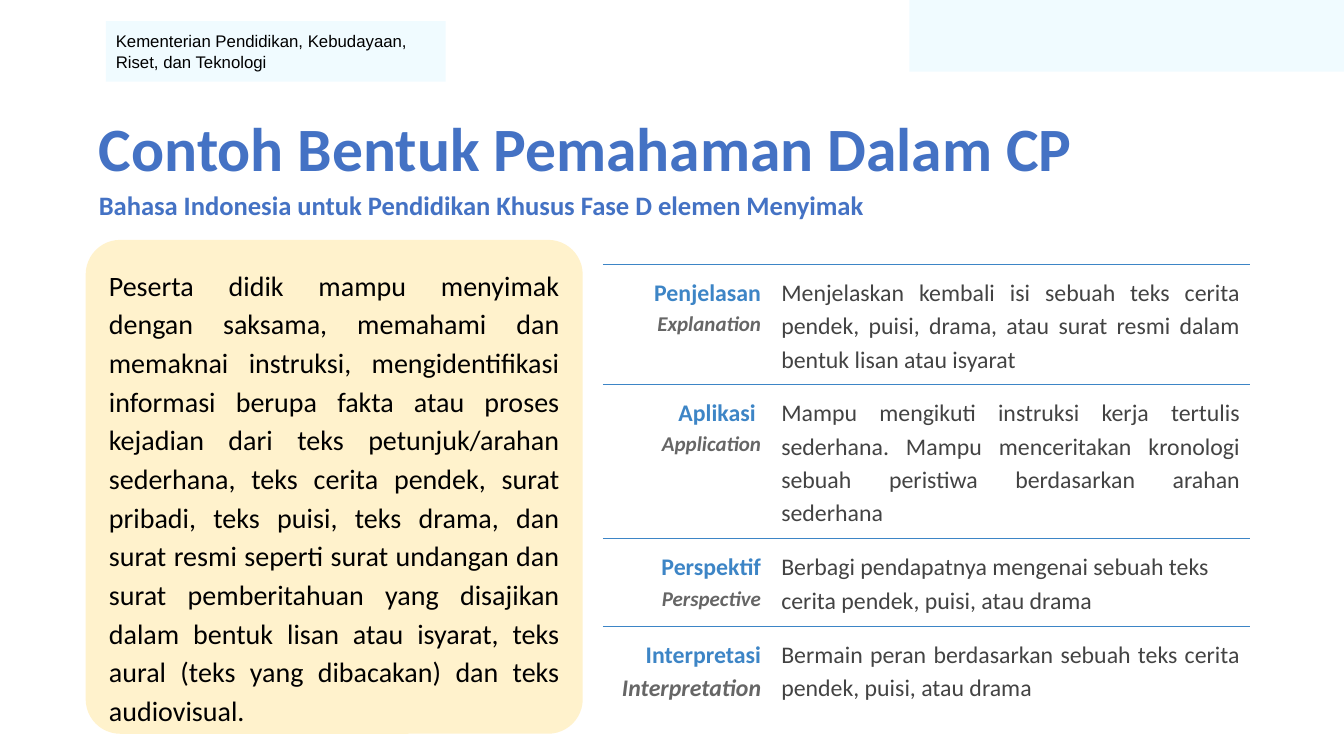
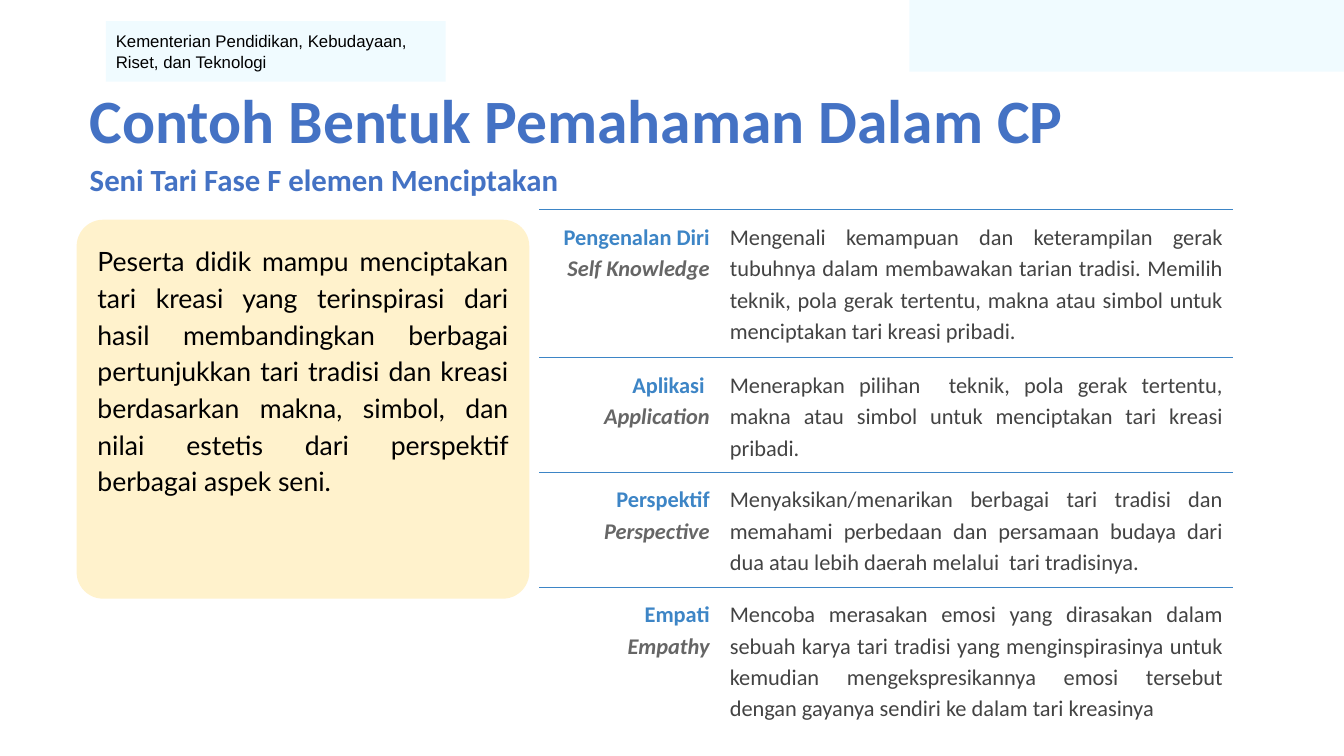
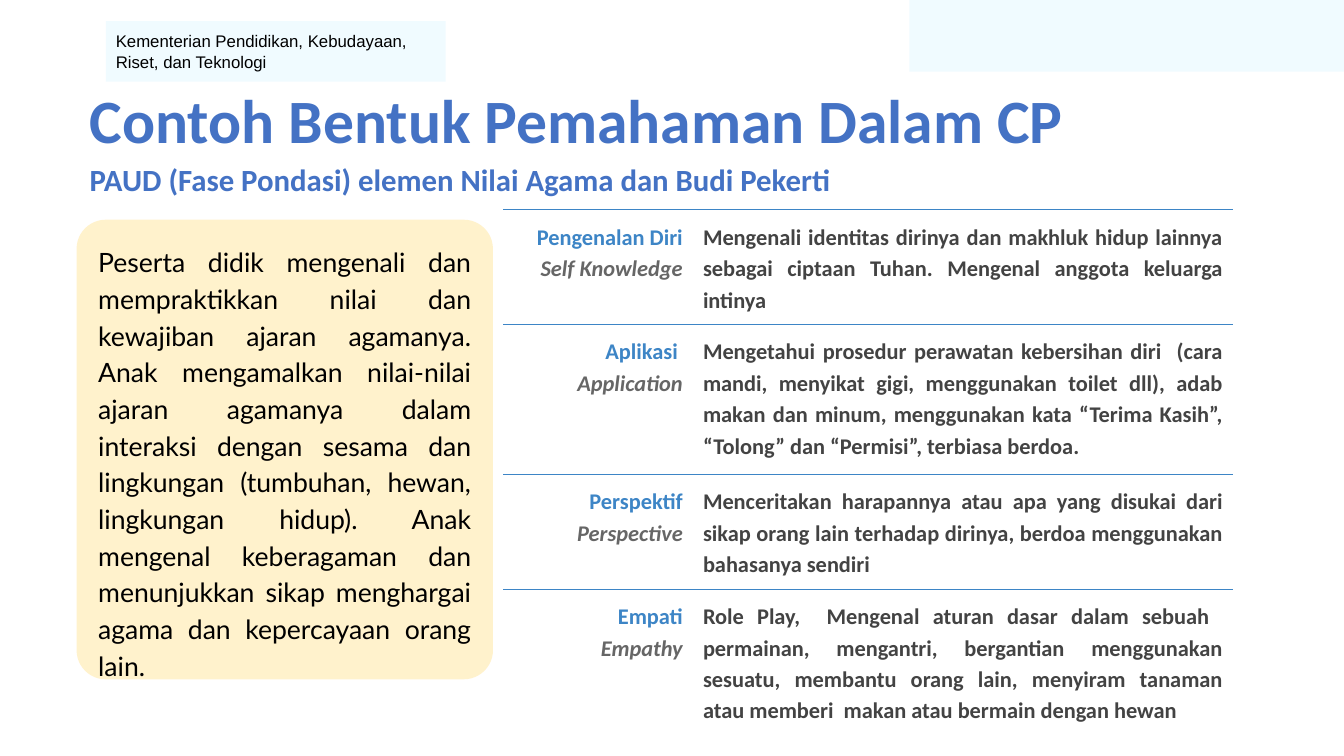
from lxml.etree import SubElement
from pptx import Presentation
from pptx.dml.color import RGBColor
from pptx.enum.shapes import MSO_SHAPE
from pptx.enum.text import MSO_ANCHOR, MSO_AUTO_SIZE, PP_ALIGN
from pptx.oxml.ns import qn
from pptx.util import Inches, Pt

TITLE = "Contoh Bentuk Pemahaman Dalam CP"
MINISTRY = "Kementerian Pendidikan, Kebudayaan, Riset, dan Teknologi"
SLIDES = [
    dict(
        subtitle="Bahasa Indonesia untuk Pendidikan Khusus Fase D elemen Menyimak",
        sub_size=19, title_at=(0.85, 0.96, 11.29, 0.55),
        box_at=(0.85, 2.38, 4.93, 4.9), box_font=("Calibri", 20),
        table_top=2.62, gap=0.2, right=12.4, size=17, bold_body=False,
        heights=(1.19, 1.53, 0.87, 1.32), english_sizes=(15, 15, 15, 17),
        goal="Peserta didik mampu menyimak dengan saksama, memahami dan memaknai instruksi, mengidentifikasi informasi berupa fakta atau proses kejadian dari teks petunjuk/arahan sederhana, teks cerita pendek, surat pribadi, teks puisi, teks drama, dan surat resmi seperti surat undangan dan surat pemberitahuan yang disajikan dalam bentuk lisan atau isyarat, teks aural (teks yang dibacakan) dan teks audiovisual.",
        rows=[
            ("Penjelasan", "Explanation", ["Menjelaskan kembali isi sebuah teks cerita pendek, puisi, drama, atau surat resmi dalam bentuk lisan atau isyarat"]),
            ("Aplikasi ", "Application", ["Mampu mengikuti instruksi kerja tertulis sederhana. Mampu menceritakan kronologi sebuah peristiwa berdasarkan arahan sederhana"]),
            ("Perspektif", "Perspective", ["Berbagi pendapatnya mengenai sebuah teks", "cerita pendek, puisi, atau drama"]),
            ("Interpretasi", "Interpretation", ["Bermain peran berdasarkan sebuah teks cerita pendek, puisi, atau drama"]),
        ]),
    dict(
        subtitle="Seni Tari Fase F elemen Menciptakan",
        sub_size=22, title_at=(0.76, 0.68, 11.36, 0.83),
        box_at=(0.76, 2.18, 4.49, 3.76), box_font=("Lato", 19),
        table_top=2.08, gap=0.1, right=12.23, size=16, bold_body=False,
        heights=(1.47, 0.81, 0.96, 1.69), english_sizes=(16,) * 4,
        goal="Peserta didik mampu menciptakan tari kreasi yang terinspirasi dari hasil membandingkan berbagai pertunjukkan tari tradisi dan kreasi berdasarkan makna, simbol, dan nilai estetis dari perspektif berbagai aspek seni.",
        rows=[
            ("Pengenalan Diri", "Self Knowledge", ["Mengenali kemampuan dan keterampilan gerak tubuhnya dalam membawakan tarian tradisi. Memilih teknik, pola gerak tertentu, makna atau simbol untuk menciptakan tari kreasi pribadi."]),
            ("Aplikasi ", "Application", ["Menerapkan pilihan  teknik, pola gerak tertentu, makna atau simbol untuk menciptakan tari kreasi pribadi."]),
            ("Perspektif", "Perspective", ["Menyaksikan/menarikan berbagai tari tradisi dan memahami perbedaan dan persamaan budaya dari dua atau lebih daerah melalui  tari tradisinya."]),
            ("Empati", "Empathy", ["Mencoba merasakan emosi yang dirasakan dalam sebuah karya tari tradisi yang menginspirasinya untuk kemudian mengekspresikannya emosi tersebut dengan gayanya sendiri ke dalam tari kreasinya"]),
        ]),
    dict(
        subtitle="PAUD (Fase Pondasi) elemen Nilai Agama dan Budi Pekerti",
        sub_size=22, title_at=(0.76, 0.68, 11.36, 0.83),
        box_at=(0.76, 2.18, 4.13, 4.56), box_font=("Lato", 19),
        table_top=2.08, gap=0.1, right=12.23, size=16, bold_body=True,
        heights=(1.08, 1.49, 1.08, 1.69), english_sizes=(16,) * 4,
        goal="Peserta didik mengenali dan mempraktikkan nilai dan kewajiban ajaran agamanya. Anak mengamalkan nilai-nilai ajaran agamanya dalam interaksi dengan sesama dan lingkungan (tumbuhan, hewan, lingkungan hidup). Anak mengenal keberagaman dan menunjukkan sikap menghargai agama dan kepercayaan orang lain.",
        rows=[
            ("Pengenalan Diri", "Self Knowledge", ["Mengenali identitas dirinya dan makhluk hidup lainnya sebagai ciptaan Tuhan. Mengenal anggota keluarga intinya"]),
            ("Aplikasi ", "Application", ["Mengetahui prosedur perawatan kebersihan diri  (cara mandi, menyikat gigi, menggunakan toilet dll), adab makan dan minum, menggunakan kata “Terima Kasih”, “Tolong” dan “Permisi”, terbiasa berdoa."]),
            ("Perspektif", "Perspective", ["Menceritakan harapannya atau apa yang disukai dari sikap orang lain terhadap dirinya, berdoa menggunakan bahasanya sendiri"]),
            ("Empati", "Empathy", ["Role Play,  Mengenal aturan dasar dalam sebuah  permainan, mengantri, bergantian menggunakan sesuatu, membantu orang lain, menyiram tanaman atau memberi  makan atau bermain dengan hewan"]),
        ]),
]

COLORS = dict(title="4472C4", band="F0FBFF", box="FFF2CC", term="3D85C6",
              english="666666", body="434343", text="000000")
COLUMN_SHARES = (0.26, 0.74)
NO_STYLE = "{2D5ABB26-0587-4C30-8999-92F81FD0307C}"


def rgb(name):
    return RGBColor.from_string(COLORS[name])


def write(tf, paragraphs, inset, anchor=MSO_ANCHOR.TOP):
    frame = dict(word_wrap=True, auto_size=MSO_AUTO_SIZE.NONE, vertical_anchor=anchor)
    frame.update({f"margin_{side}": Inches(inset) for side in ("left", "top", "right", "bottom")})
    for key, value in frame.items():
        setattr(tf, key, value)
    fill_text(tf, paragraphs)


def fill_text(tf, paragraphs):
    for i, (text, color, align, spacing, font) in enumerate(paragraphs):
        p = tf.paragraphs[0] if i == 0 else tf.add_paragraph()
        p.alignment, p.line_spacing = align, spacing
        p.space_before = p.space_after = Pt(0)
        r = p.add_run()
        r.text = text
        r.font.color.rgb = rgb(color)
        for key, value in font.items():
            setattr(r.font, key, value)


def font(size, name="Calibri", bold=False, italic=False):
    return dict(size=Pt(size), name=name, bold=bold, italic=italic)


def add_panel(s, kind, at, color):
    sp = s.shapes.add_shape(kind, *map(Inches, at))
    sp.shadow.inherit = False
    sp.fill.solid()
    sp.fill.fore_color.rgb = rgb(color)
    sp.line.fill.background()
    return sp


def add_shared_bands(s, layout):
    corner = add_panel(s, MSO_SHAPE.RECTANGLE, (9.02, 0, 4.31, 0.71), "band")
    ministry = add_panel(s, MSO_SHAPE.RECTANGLE, (1.05, 0.21, 3.37, 0.6), "band")
    write(ministry.text_frame, [(MINISTRY, "text", PP_ALIGN.LEFT, 1.0, font(12, "Arial"))],
          0.1, MSO_ANCHOR.MIDDLE)
    for i, sp in enumerate((corner, ministry)):
        layout.shapes.element.insert(2 + i, sp.element)


def add_title(s, d):
    title = s.shapes.title
    title.left, title.top, title.width, title.height = map(Inches, d["title_at"])
    write(title.text_frame, [
        (TITLE, "title", PP_ALIGN.LEFT, 1.0, font(44, bold=True)),
        (d["subtitle"], "title", PP_ALIGN.LEFT, 1.15, font(d["sub_size"], bold=True)),
    ], 0.13)


def rule_above(cell):
    ln = SubElement(cell._tc.get_or_add_tcPr(), qn("a:lnT"), w=str(Pt(0.75)))
    SubElement(SubElement(ln, qn("a:solidFill")), qn("a:srgbClr"), val=COLORS["term"])


def add_forms_table(s, d):
    left = d["box_at"][0] + d["box_at"][2] + d["gap"]
    width = d["right"] - left
    frame = s.shapes.add_table(len(d["rows"]), 2, *map(
        Inches, (left, d["table_top"], width, sum(d["heights"]))))
    frame.element.find(".//" + qn("a:tableStyleId")).text = NO_STYLE
    table = frame.table
    table.first_row = table.horz_banding = False
    for column, share in zip(table.columns, COLUMN_SHARES):
        column.width = Inches(width * share)
    for i, (term, english, body) in enumerate(d["rows"]):
        table.rows[i].height = Inches(d["heights"][i])
        texts = (
            [(term, "term", PP_ALIGN.RIGHT, 1.15, font(d["size"], bold=True)),
             (english, "english", PP_ALIGN.RIGHT, 1.15,
              font(d["english_sizes"][i], bold=True, italic=True))],
            [(line, "body", PP_ALIGN.JUSTIFY, 1.15, font(d["size"], bold=d["bold_body"]))
             for line in body],
        )
        for cell, paragraphs in zip(table.rows[i].cells, texts):
            for side in ("left", "top", "right", "bottom"):
                setattr(cell, f"margin_{side}", Inches(0.1))
            rule_above(cell)
            cell.fill.background()
            fill_text(cell.text_frame, paragraphs)


def add_goal(s, d):
    box = add_panel(s, MSO_SHAPE.ROUNDED_RECTANGLE, d["box_at"], "box")
    box.adjustments[0] = 0.07
    name, size = d["box_font"]
    write(box.text_frame, [(d["goal"], "text", PP_ALIGN.JUSTIFY, 1.15, font(size, name))], 0.13)


def main():
    prs = Presentation()
    prs.slide_width, prs.slide_height = Inches(13.33), Inches(7.5)
    layout = prs.slide_layouts[5]
    for i, d in enumerate(SLIDES):
        s = prs.slides.add_slide(layout)
        if i == 0:
            add_shared_bands(s, layout)
        add_title(s, d)
        add_forms_table(s, d)
        add_goal(s, d)
    prs.save("out.pptx")


if __name__ == "__main__":
    main()
